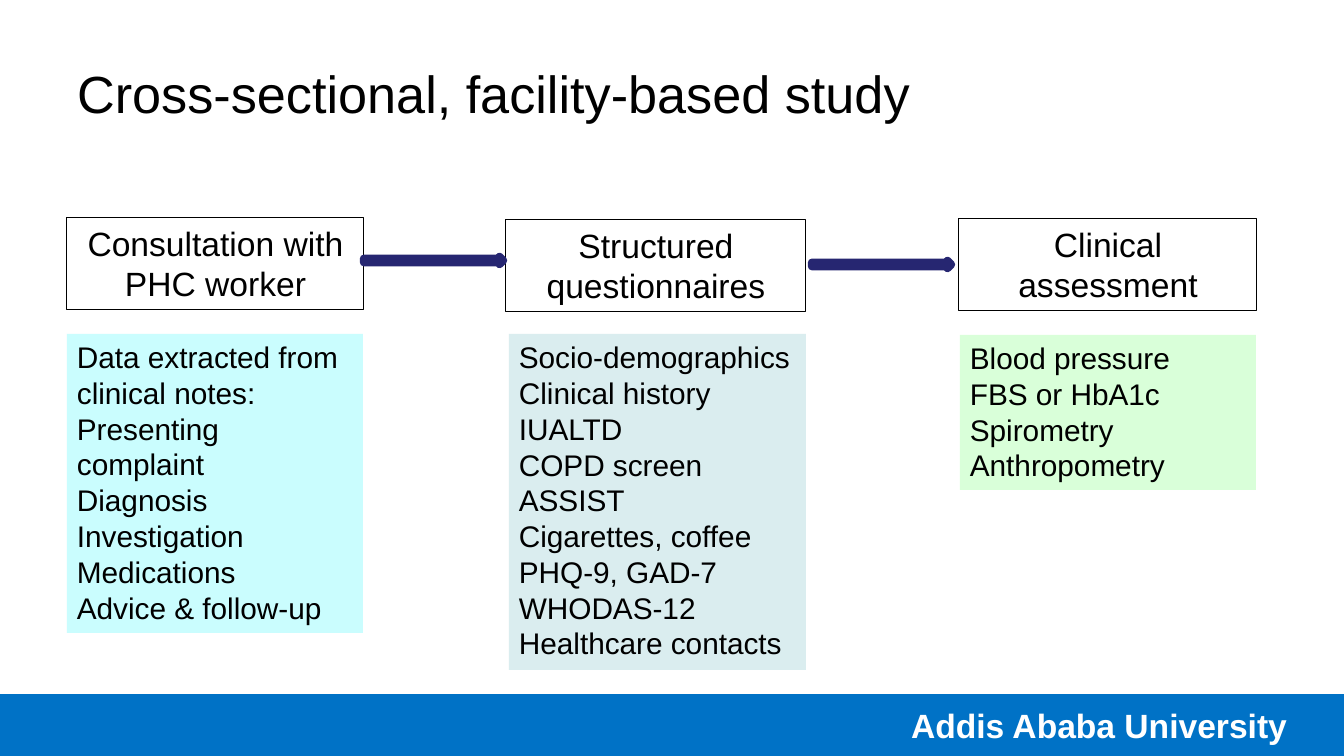
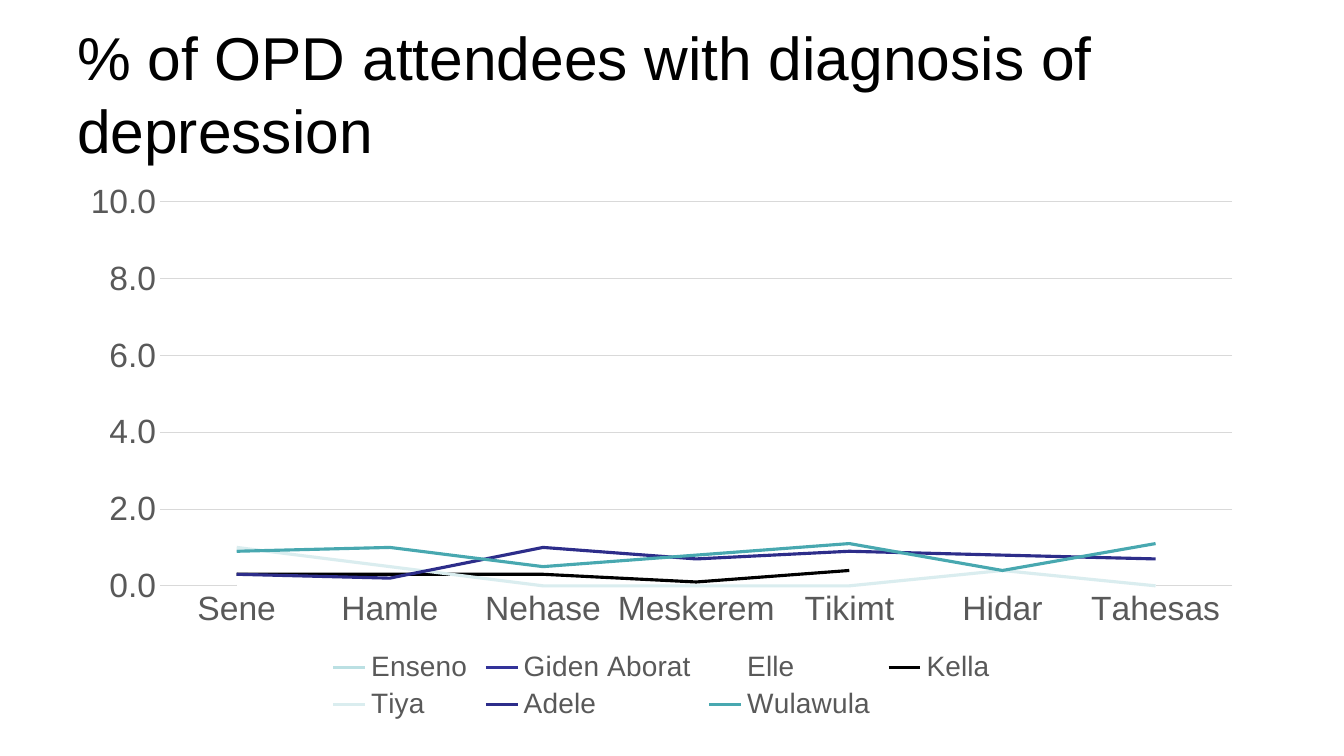
"""Build two slides on a facility-based study: its steps and a depression diagnosis chart."""
from pptx import Presentation
from pptx.chart.data import CategoryChartData
from pptx.dml.color import RGBColor
from pptx.enum.chart import XL_CHART_TYPE, XL_LEGEND_POSITION, XL_TICK_MARK
from pptx.enum.shapes import MSO_SHAPE
from pptx.enum.text import MSO_ANCHOR, MSO_AUTO_SIZE, PP_ALIGN
from pptx.util import Pt

SCALE = 12192000 / 1344
FONT = "Arial"
BLACK = RGBColor(0x00, 0x00, 0x00)
WHITE = RGBColor(0xFF, 0xFF, 0xFF)
BAND_BLUE = RGBColor(0x00, 0x72, 0xC6)
AQUA = RGBColor(0xCA, 0xFD, 0xFE)
PALE_TEAL = RGBColor(0xDA, 0xED, 0xEF)
PALE_GREEN = RGBColor(0xD9, 0xFF, 0xD9)
LIGHT_TEAL = RGBColor(0xBB, 0xE0, 0xE3)
TEAL = RGBColor(0x48, 0xA8, 0xB0)
INDIGO = RGBColor(0x33, 0x33, 0x99)
DARK_INDIGO = RGBColor(0x2D, 0x2D, 0x8A)
ARROW_EDGE = RGBColor(0x26, 0x26, 0x71)
GREY = RGBColor(0x59, 0x59, 0x59)
GRID_GREY = RGBColor(0xD9, 0xD9, 0xD9)

STUDY_TITLE = "Cross-sectional, facility-based study"
FOOTER = "Addis Ababa University"
STEPS = [
    {"heading": "Consultation with PHC worker", "heading_box": (67, 218, 297, 92),
     "list_box": (67, 334, 296, 299), "fill": AQUA,
     "items": ["Data extracted from clinical notes:", "Presenting complaint", "Diagnosis",
               "Investigation", "Medications", "Advice & follow-up"]},
    {"heading": "Structured questionnaires", "heading_box": (506, 220, 300, 92),
     "list_box": (509, 334, 297, 336), "fill": PALE_TEAL,
     "items": ["Socio-demographics", "Clinical history", "IUALTD", "COPD screen", "ASSIST",
               "Cigarettes, coffee", "PHQ-9, GAD-7", "WHODAS-12", "Healthcare contacts"]},
    {"heading": "Clinical assessment", "heading_box": (959, 219, 298, 92),
     "list_box": (960, 335, 296, 155), "fill": PALE_GREEN,
     "items": ["Blood pressure", "FBS or HbA1c", "Spirometry", "Anthropometry"]},
]
ARROWS = [(364, 257, 139, 7), (812, 261, 139, 7)]

CHART_TITLE = "% of OPD attendees with diagnosis of depression"
MONTHS = ["Sene", "Hamle", "Nehase", "Meskerem", "Tikimt", "Hidar", "Tahesas"]
SERIES = [
    ("Enseno", LIGHT_TEAL, [0, 0, 0, 0, 0, 0, 0]),
    ("Giden Aborat", INDIGO, [None, None, 0, 0, 0, 0, 0]),
    ("Elle", WHITE, [0, 0, 0, 0, 0, 0, 0]),
    ("Kella", BLACK, [0.3, 0.3, 0.3, 0.1, 0.4, None, None]),
    ("Tiya", PALE_TEAL, [1, 0.5, 0, 0, 0, 0.4, 0]),
    ("Adele", DARK_INDIGO, [0.3, 0.2, 1, 0.7, 0.9, 0.8, 0.7]),
    ("Wulawula", TEAL, [0.9, 1, 0.5, 0.8, 1.1, 0.4, 1.1]),
]


def px(length):
    """Turn pixels into EMU."""
    return round(length * SCALE)


def style_font(font, size, color, bold=False):
    """Set the shared typeface with a size and colour."""
    font.name, font.size, font.bold = FONT, Pt(size), bold
    font.color.rgb = color


def write_text(shape, lines, size, color=BLACK, bold=False, align=PP_ALIGN.LEFT,
               anchor=MSO_ANCHOR.TOP, right_margin=10):
    """Fill a shape with one paragraph per line."""
    frame = shape.text_frame
    frame.word_wrap = True
    frame.auto_size = MSO_AUTO_SIZE.NONE
    frame.vertical_anchor = anchor
    frame.margin_right = px(right_margin)
    for index, line in enumerate(lines):
        para = frame.add_paragraph() if index else frame.paragraphs[0]
        para.alignment = align
        span = para.add_run()
        span.text = line
        style_font(span.font, size, color, bold)


def add_box(page, place, kind=MSO_SHAPE.RECTANGLE, fill=None, line=None, width=0.75):
    """Add a preset shape with an optional fill and outline."""
    box = page.shapes.add_shape(kind, *map(px, place))
    box.shadow.inherit = False
    if fill is None:
        box.fill.background()
    else:
        box.fill.solid()
        box.fill.fore_color.rgb = fill
    if line is None:
        box.line.fill.background()
    else:
        box.line.color.rgb = line
        box.line.width = Pt(width)
    return box


def add_page(deck, title, size):
    """Add a title-only page with the shared title position."""
    page = deck.slides.add_slide(deck.slide_layouts[5])
    holder = page.shapes.title
    holder.left, holder.top, holder.width, holder.height = map(px, (67, 30, 1210, 126))
    write_text(holder, [title], size, anchor=MSO_ANCHOR.MIDDLE)
    return page


def add_footer(page):
    """Add the university band along the bottom."""
    band = add_box(page, (0, 695, 1344, 60), fill=BAND_BLUE, line=BAND_BLUE, width=2)
    write_text(band, [FOOTER], 24, color=WHITE, bold=True, align=PP_ALIGN.RIGHT,
               anchor=MSO_ANCHOR.MIDDLE, right_margin=57)


def build_study(deck):
    """Build the page of study steps."""
    page = add_page(deck, STUDY_TITLE, 37.3)
    add_footer(page)
    for step in STEPS:
        heading = add_box(page, step["heading_box"], line=BLACK)
        write_text(heading, [step["heading"]], 24, align=PP_ALIGN.CENTER)
        details = add_box(page, step["list_box"], fill=step["fill"])
        write_text(details, step["items"], 21.3)
    for place in ARROWS:
        add_box(page, place, kind=MSO_SHAPE.RIGHT_ARROW, fill=INDIGO, line=ARROW_EDGE, width=6)


def build_chart(deck):
    """Build the page with the line chart."""
    page = add_page(deck, CHART_TITLE, 43.2)
    data = CategoryChartData(number_format="0.0")
    data.categories = MONTHS
    for name, _, values in SERIES:
        data.add_series(name, values)
    chart = page.shapes.add_chart(XL_CHART_TYPE.LINE, *map(px, (67, 172, 1189, 554)), data).chart
    chart.has_title = False
    style_font(chart.font, 10, BLACK)
    chart.has_legend = True
    chart.legend.position = XL_LEGEND_POSITION.BOTTOM
    chart.legend.include_in_layout = False
    style_font(chart.legend.font, 20, GREY)

    months, percent = chart.category_axis, chart.value_axis
    for axis in (months, percent):
        axis.major_tick_mark = axis.minor_tick_mark = XL_TICK_MARK.NONE
        style_font(axis.tick_labels.font, 24, GREY)
    percent.minimum_scale, percent.maximum_scale, percent.major_unit = 0, 10, 2
    percent.tick_labels.number_format = "0.0"
    percent.tick_labels.number_format_is_linked = False
    percent.format.line.fill.background()
    percent.has_major_gridlines = True
    for line in (months.format.line, percent.major_gridlines.format.line):
        line.color.rgb = GRID_GREY
        line.width = Pt(0.75)

    plot = chart.plots[0]
    plot.vary_by_categories = False
    for series, (_, color, _) in zip(plot.series, SERIES):
        series.smooth = False
        series.format.line.color.rgb = color
        series.format.line.width = Pt(2.25)


def main():
    """Create and save the deck."""
    deck = Presentation()
    deck.slide_width, deck.slide_height = px(1344), px(756)
    build_study(deck)
    build_chart(deck)
    deck.save("out.pptx")


if __name__ == "__main__":
    main()
